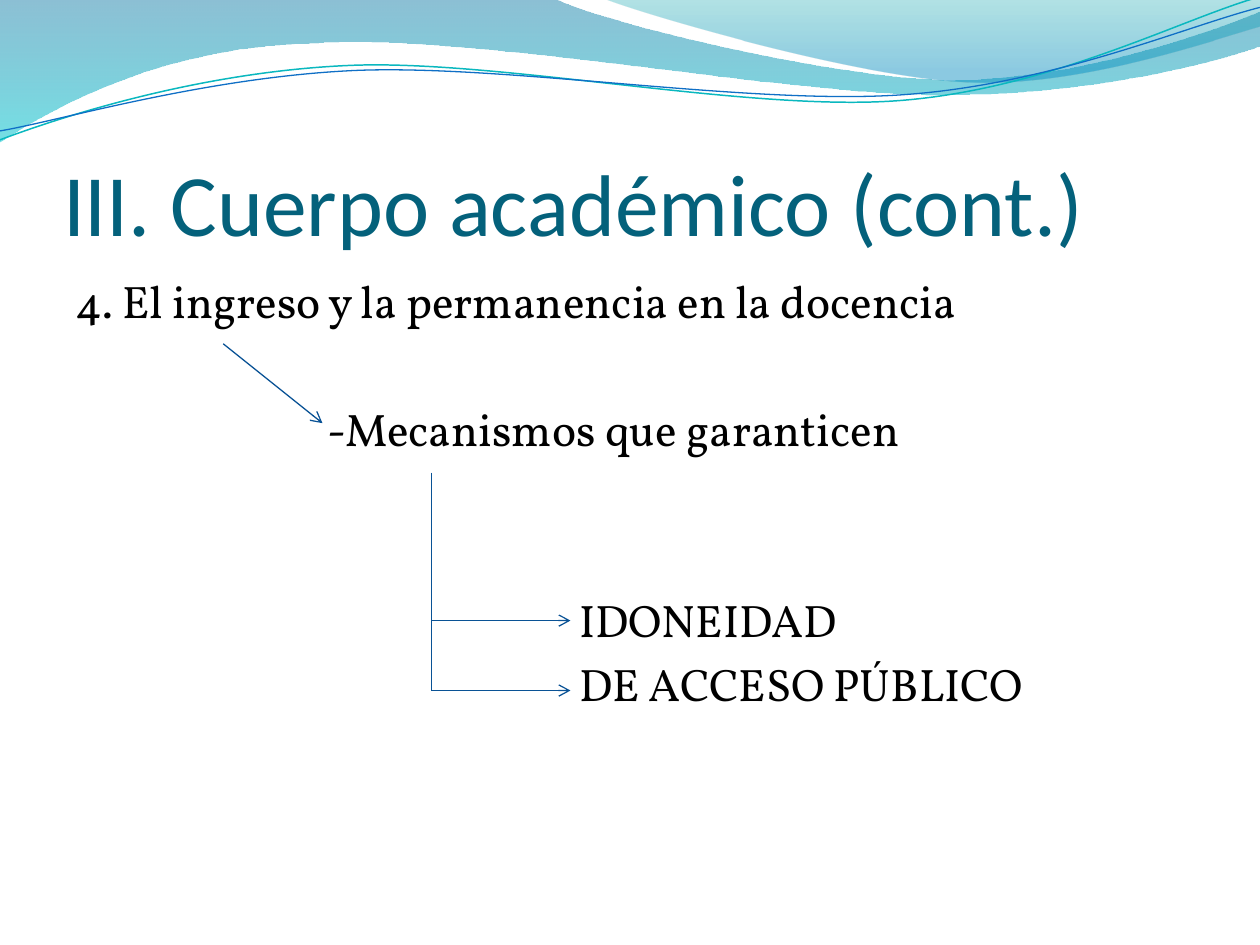
from dataclasses import dataclass

from lxml import etree
from pptx import Presentation
from pptx.dml.color import RGBColor
from pptx.enum.shapes import MSO_CONNECTOR
from pptx.enum.text import MSO_ANCHOR, PP_ALIGN
from pptx.oxml.ns import qn
from pptx.util import Cm, Pt

STRAIGHT = MSO_CONNECTOR.STRAIGHT
BOTTOM = MSO_ANCHOR.BOTTOM
TOP = MSO_ANCHOR.TOP
LEFT = PP_ALIGN.LEFT
TITLE_ONLY = 5
UNITS_PER_CM = 1000


@dataclass(frozen=True)
class Theme:
    """Colours, fonts and sizes of the deck."""

    title_color: str = "04617B"
    text_color: str = "000000"
    arrow_color: str = "095295"
    teal_line: str = "0AB8BF"
    blue_line: str = "0F6FC6"
    title_font: str = "Calibri"
    body_font: str = "Vollkorn"
    title_size: float = 50
    body_size: float = 26
    row_height: float = 36.3
    row_gap: float = 5.4
    line_width: float = 0.75
    wide_line: float = 0.85


THEME = Theme()

LOWER_WAVE = [
    [(0, 0)],
    [(11.18, -0.03)],
    [(12.09, 0.43), (16.87, 1.6), (19.25, 1.6)],
    [(21.67, 1.6), (24.33, 0.66), (25.4, 0.23)],
    [(25.43, 0.91)],
    [(24.97, 1.12), (22.1, 1.93), (18.95, 1.91)],
    [(15.8, 1.91), (9.7, 0.71), (6.53, 0.86)],
    [(3.28, 0.91), (1.17, 2.11), (-0.03, 2.87)],
    [(0, 0)],
]
UPPER_WAVE = [
    [(12.17, -0.03)],
    [(12.93, 0.28), (17.32, 1.57), (19.53, 1.65)],
    [(21.74, 1.75), (24.41, 0.81), (25.4, 0.53)],
    [(25.4, 0)],
    [(12.17, -0.03)],
]
TEAL_STROKE = [
    [(0, 2.82)],
    [(1.22, 2.36), (4.01, 1.45), (7.04, 1.32)],
    [(10.03, 1.19), (15.06, 2.26), (18.11, 2.03)],
    [(21.16, 1.8), (23.83, 0.38), (25.35, -0.05)],
]
BLUE_STROKE = [
    [(0, 2.64)],
    [(1.19, 2.44), (4.17, 1.55), (7.19, 1.42)],
    [(10.24, 1.3), (15.16, 2.13), (18.21, 1.91)],
    [(21.23, 1.7), (23.9, 0.53), (25.4, 0.15)],
]
LOWER_STOPS = [(0, "0074A1", 45), (100, "00C6CF", 55)]
UPPER_STOPS = [(0, "00A1A9", 30), (80, "008BBF", 45)]

OUTLINE = [
    ("4. El ingreso y la permanencia en la docencia", 0, 0),
    ("-Mecanismos que garanticen", 5.08, 1),
    ("IDONEIDAD", 10.16, 2),
    ("DE ACCESO PÚBLICO", 10.16, 0),
]


def add_outline(page, segments, close):
    """Draw a freeform whose three-point segments become cubic curves."""
    units = [(x * UNITS_PER_CM, y * UNITS_PER_CM) for part in segments for x, y in part]
    builder = page.shapes.build_freeform(*units[0], scale=Cm(1) / UNITS_PER_CM)
    builder.add_line_segments(units[1:], close=close)
    shape = builder.convert_to_shape()
    shape.shadow.inherit = False
    steps = iter(list(shape.element.spPr.iter(qn("a:lnTo"))))
    for segment in segments[1:]:
        group = [next(steps) for _ in segment]
        if len(group) == 3:
            group[0].tag
            curve = etree.Element(qn("a:cubicBezTo"))
            group[0].addprevious(curve)
            for step in group:
                curve.append(step[0])
                step.getparent().remove(step)
    return shape


def add_wave(page, segments, stops):
    """Add a closed wave with a translucent downward gradient."""
    wave = add_outline(page, segments, True)
    wave.line.fill.background()
    wave.fill.gradient()
    wave.fill.gradient_angle = 270
    elements = wave.element.spPr.iter(qn("a:gs"))
    for stop, element, (position, color, opacity) in zip(
        wave.fill.gradient_stops, elements, stops
    ):
        stop.color.rgb = RGBColor.from_string(color)
        element.set("pos", str(position * 1000))
        etree.SubElement(element[0], qn("a:alpha"), val=str(opacity * 1000))


def add_stroke(page, segments, color, width):
    """Add an open curved line."""
    stroke = add_outline(page, segments, False)
    stroke.fill.background()
    stroke.line.color.rgb = RGBColor.from_string(color)
    stroke.line.width = Pt(width)


def format_paragraph(para, font, size, color):
    """Align a paragraph left and style its runs."""
    para.alignment = LEFT
    for span in para.runs:
        span.font.name = font
        span.font.size = Pt(size)
        span.font.color.rgb = RGBColor.from_string(color)


def set_title(page, text):
    """Fill, place and format the title in front of the waves."""
    title = page.shapes.title
    title.left, title.top, title.width, title.height = Cm(1.27), Cm(1.95), Cm(22.86), Cm(3.17)
    frame = title.text_frame
    frame.text = text
    frame.vertical_anchor = BOTTOM
    frame.margin_left = frame.margin_right = frame.margin_bottom = 0
    frame.margin_top = Cm(0.13)
    format_paragraph(frame.paragraphs[0], THEME.title_font, THEME.title_size, THEME.title_color)
    title.element.getparent().append(title.element)


def add_body(page, rows):
    """Add the outline, with indents and whole-row gaps above paragraphs."""
    box = page.shapes.add_textbox(Cm(1.27), Cm(5.38), Cm(22.86), Cm(12.19))
    frame = box.text_frame
    frame.word_wrap = True
    frame.vertical_anchor = TOP
    for index, (text, indent, empty_rows) in enumerate(rows):
        para = frame.add_paragraph() if index else frame.paragraphs[0]
        para.text = text
        if index:
            para.space_before = Pt(empty_rows * THEME.row_height + THEME.row_gap)
        para._p.get_or_add_pPr().set("marL", str(Cm(indent)))
        format_paragraph(para, THEME.body_font, THEME.body_size, THEME.text_color)


def add_line(page, start, end, arrow=True):
    """Add a straight connector, with an open arrowhead if wanted."""
    line = page.shapes.add_connector(STRAIGHT, *map(Cm, start), *map(Cm, end))
    line.line.color.rgb = RGBColor.from_string(THEME.arrow_color)
    line.line.width = Pt(THEME.line_width)
    if arrow:
        etree.SubElement(line.line._get_or_add_ln(), qn("a:tailEnd"), type="arrow")
    etree.SubElement(line.element.spPr, qn("a:effectLst"))


def main():
    """Build and save the slide."""
    deck = Presentation()
    deck.slide_width, deck.slide_height = Cm(25.4), Cm(19.05)
    page = deck.slides.add_slide(deck.slide_layouts[TITLE_ONLY])
    add_wave(page, LOWER_WAVE, LOWER_STOPS)
    add_wave(page, UPPER_WAVE, UPPER_STOPS)
    add_stroke(page, TEAL_STROKE, THEME.teal_line, THEME.wide_line)
    add_stroke(page, BLUE_STROKE, THEME.blue_line, THEME.line_width)
    set_title(page, "III. Cuerpo académico (cont.)")
    add_body(page, OUTLINE)
    trunk, branches = 8.7, (12.51, 13.92)
    add_line(page, (trunk, 9.53), (trunk, branches[-1]), arrow=False)
    for height in branches:
        add_line(page, (trunk, height), (11.5, height))
    add_line(page, (4.5, 6.93), (6.5, 8.53))
    deck.save("out.pptx")


if __name__ == "__main__":
    main()
